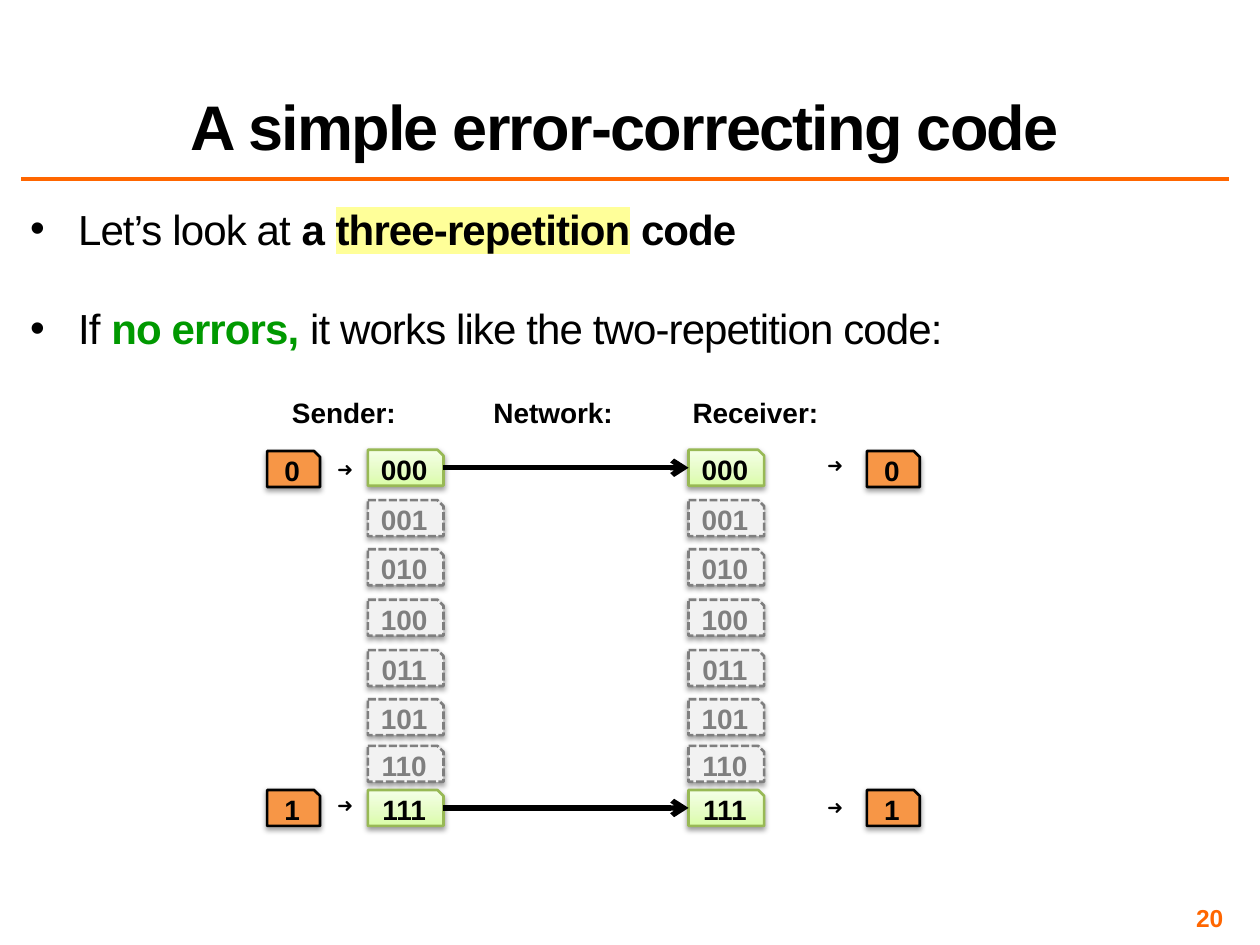
from dataclasses import dataclass
from typing import Optional

from lxml import etree
from pptx import Presentation
from pptx import util as u
from pptx.dml.color import RGBColor
from pptx.enum import dml, shapes, text
from pptx.oxml import parse_xml
from pptx.oxml.ns import nsdecls, qn

COLUMNS, ROWS = 100, 75  # square grid cells over the whole slide
CELL = u.Inches(0.1)
FONT = "Arial"

BLACK = RGBColor(0x00, 0x00, 0x00)
ACCENT = RGBColor(0xFF, 0x66, 0x00)
ORANGE = RGBColor(0xF7, 0x96, 0x46)
GREEN = RGBColor(0x00, 0x99, 0x00)
GREEN_EDGE = RGBColor(0x98, 0xB9, 0x55)
GRAY = RGBColor(0x7F, 0x7F, 0x7F)
PALE = RGBColor(0xF2, 0xF2, 0xF2)
MARKER = RGBColor(0xFF, 0xFF, 0x99)
GREEN_STOPS = (
    (0, RGBColor(0xDA, 0xFD, 0xA7)),
    (35, RGBColor(0xE4, 0xFC, 0xC2)),
    (100, RGBColor(0xF5, 0xFF, 0xE7)),
)


@dataclass(frozen=True)
class Style:
    ink: RGBColor
    edge: RGBColor
    fill: Optional[RGBColor] = None  # None means the green gradient
    dashed: bool = False


@dataclass(frozen=True)
class Span:
    words: str
    bold: bool = False
    color: RGBColor = BLACK
    highlight: Optional[RGBColor] = None


@dataclass(frozen=True)
class Label:
    words: str
    left: float
    top: float
    width: float
    height: float
    size: float = 16
    wrap: bool = True


BIT = Style(BLACK, BLACK, ORANGE)
VALID = Style(BLACK, GREEN_EDGE)
UNUSED = Style(GRAY, GRAY, PALE, dashed=True)

CODE_ROWS = {"000": 35.7, "001": 39.7, "010": 43.6, "100": 47.6,
             "011": 51.6, "101": 55.5, "110": 59.2, "111": 62.7}
BIT_ROWS = {"0": 35.8, "1": 62.7}
SENDER, RECEIVER = 29.2, 54.65
BIT_COLUMNS = (21.2, 68.8)
CODE_WIDTH, BIT_WIDTH, BOX_HEIGHT = 6, 4.2, 2.85

LABELS = [
    Label("Sender:", 22.1, 30.9, 10.4, 3.7),
    Label("Network:", 38, 30.9, 11.8, 3.7),
    Label("Receiver:", 53.9, 30.9, 12.1, 3.7, wrap=False),
] + [
    Label("➜", left, top, 3.6, 2.9, size=11, wrap=False)
    for left, top in ((25.6, 35.8), (25.6, 62.5), (64.5, 35.5), (64.5, 62.6))
]

BULLETS = [
    [Span("Let’s look at "), Span("a ", True),
     Span("three-repetition", True, highlight=MARKER), Span(" code", True)],
    [Span("If "), Span("no errors, ", True, GREEN),
     Span("it works like the two-repetition code:")],
]


def grid(*cells: float) -> list[u.Emu]:
    return [u.Emu(round(cell * CELL)) for cell in cells]


def add_span(para, span: Span, size: float, tracking: float = 0) -> None:
    run = para.add_run()
    run.text = span.words
    run.font.size, run.font.bold, run.font.name = u.Pt(size), span.bold, FONT
    run.font.color.rgb = span.color
    properties = run.font._element
    if tracking:
        properties.set("spc", str(round(tracking * 100)))
    if span.highlight is not None:
        mark = parse_xml(f'<a:highlight {nsdecls("a")}>'
                         f'<a:srgbClr val="{span.highlight}"/></a:highlight>')
        properties.find(qn("a:latin")).addprevious(mark)


def add_text_box(page, left: float, top: float, width: float, height: float,
                 inset: float = 1, wrap: bool = True):
    frame = page.shapes.add_textbox(*grid(left, top, width, height)).text_frame
    frame.word_wrap = wrap
    side, end = grid(inset, min(inset, 0.5))
    frame.margin_left = frame.margin_right = side
    frame.margin_top = frame.margin_bottom = end
    return frame


def add_label(page, label: Label) -> None:
    frame = add_text_box(page, label.left, label.top, label.width, label.height,
                         wrap=label.wrap)
    para = frame.paragraphs[0]
    para.alignment = text.PP_ALIGN.CENTER
    add_span(para, Span(label.words, True), label.size)


def add_shadow(box) -> None:
    box._element.spPr.append(parse_xml(
        f'<a:effectLst {nsdecls("a")}><a:outerShdw blurRad="{int(u.Pt(3.1))}" '
        f'dist="{int(u.Pt(1.6))}" dir="5400000" rotWithShape="0">'
        '<a:srgbClr val="000000"><a:alpha val="38000"/></a:srgbClr>'
        '</a:outerShdw></a:effectLst>'))


def fill_green(box) -> None:
    box.fill.gradient()
    box.fill.gradient_angle = 90
    stops = box._element.spPr.find(qn("a:gradFill")).find(qn("a:gsLst"))
    for stop in list(stops):
        stops.remove(stop)
    for share, color in GREEN_STOPS:
        stop = etree.SubElement(stops, qn("a:gs"), pos=str(share * 1000))
        etree.SubElement(stop, qn("a:srgbClr"), val=str(color))


def add_code_box(page, words: str, left: float, top: float, width: float, style: Style):
    box = page.shapes.add_shape(shapes.MSO_SHAPE.SNIP_1_RECTANGLE,
                                *grid(left, top, width, BOX_HEIGHT))
    if style.fill is None:
        fill_green(box)
    else:
        box.fill.solid()
        box.fill.fore_color.rgb = style.fill
    box.line.color.rgb, box.line.width = style.edge, u.Pt(1.5)
    if style.dashed:
        box.line.dash_style = dml.MSO_LINE.SQUARE_DOT
    add_shadow(box)
    frame = box.text_frame
    frame.margin_top = frame.margin_bottom = 0
    frame.vertical_anchor = text.MSO_ANCHOR.BOTTOM
    para = frame.paragraphs[0]
    para.alignment = text.PP_ALIGN.CENTER
    add_span(para, Span(words, True, style.ink), 16)
    return box


def add_line(page, ends: list[u.Emu], color: RGBColor, width: float):
    line = page.shapes.add_connector(shapes.MSO_CONNECTOR.STRAIGHT, *ends)
    line.line.color.rgb, line.line.width = color, u.Pt(width)
    etree.SubElement(line._element.spPr, qn("a:effectLst"))
    return line


def add_arrow(page, start, end) -> None:
    arrow = add_line(page, grid(0, 0, 0, 0), BLACK, 3)
    arrow.begin_connect(start, 3)
    arrow.end_connect(end, 1)
    etree.SubElement(arrow.line._get_or_add_ln(), qn("a:tailEnd"), type="arrow")


def add_bullets(page) -> None:
    frame = add_text_box(page, 2, 16.5, 95.6, 14.4, inset=0.4)
    for index, spans in enumerate(BULLETS):
        para = frame.add_paragraph() if index else frame.paragraphs[0]
        para.line_spacing = 0.8
        para.space_before = u.Pt(34 if index else 4.8)
        properties = para._p.get_or_add_pPr()
        properties.set("marL", str(int(u.Inches(0.38))))
        properties.set("indent", str(-int(u.Inches(0.38))))
        etree.SubElement(properties, qn("a:buFont"), typeface=FONT)
        etree.SubElement(properties, qn("a:buChar"), char="•")
        for span in spans:
            add_span(para, span, 24, tracking=-0.5)


def add_title(page) -> None:
    title = page.shapes.title
    title.left, title.top, title.width, title.height = grid(1.7, 1.7, 95.8, 11.7)
    title.text_frame.vertical_anchor = text.MSO_ANCHOR.BOTTOM
    para = title.text_frame.paragraphs[0]
    para.alignment, para.line_spacing = text.PP_ALIGN.CENTER, 0.8
    add_span(para, Span("A simple error-correcting code", True), 36, tracking=-1)


def add_page_number(page) -> None:
    frame = add_text_box(page, 74.2, 71.7, 23.3, 2.3, inset=0.4)
    frame.vertical_anchor = text.MSO_ANCHOR.MIDDLE
    para = frame.paragraphs[0]
    para.alignment = text.PP_ALIGN.RIGHT
    add_span(para, Span("20", True, ACCENT), 14)


def main() -> None:
    deck = Presentation()
    deck.slide_width, deck.slide_height = grid(COLUMNS, ROWS)
    page = deck.slides.add_slide(deck.slide_layouts[5])
    add_title(page)
    add_line(page, grid(1.7, 14.2, 97.5, 14.2), ACCENT, 2)
    add_page_number(page)
    for code, top in CODE_ROWS.items():
        style = VALID if code in ("000", "111") else UNUSED
        sent, received = (add_code_box(page, code, left, top, CODE_WIDTH, style)
                          for left in (SENDER, RECEIVER))
        if style is VALID:
            add_arrow(page, sent, received)
    for bit, top in BIT_ROWS.items():
        for left in BIT_COLUMNS:
            add_code_box(page, bit, left, top, BIT_WIDTH, BIT)
    for label in LABELS:
        add_label(page, label)
    add_bullets(page)
    deck.save("out.pptx")


if __name__ == "__main__":
    main()
